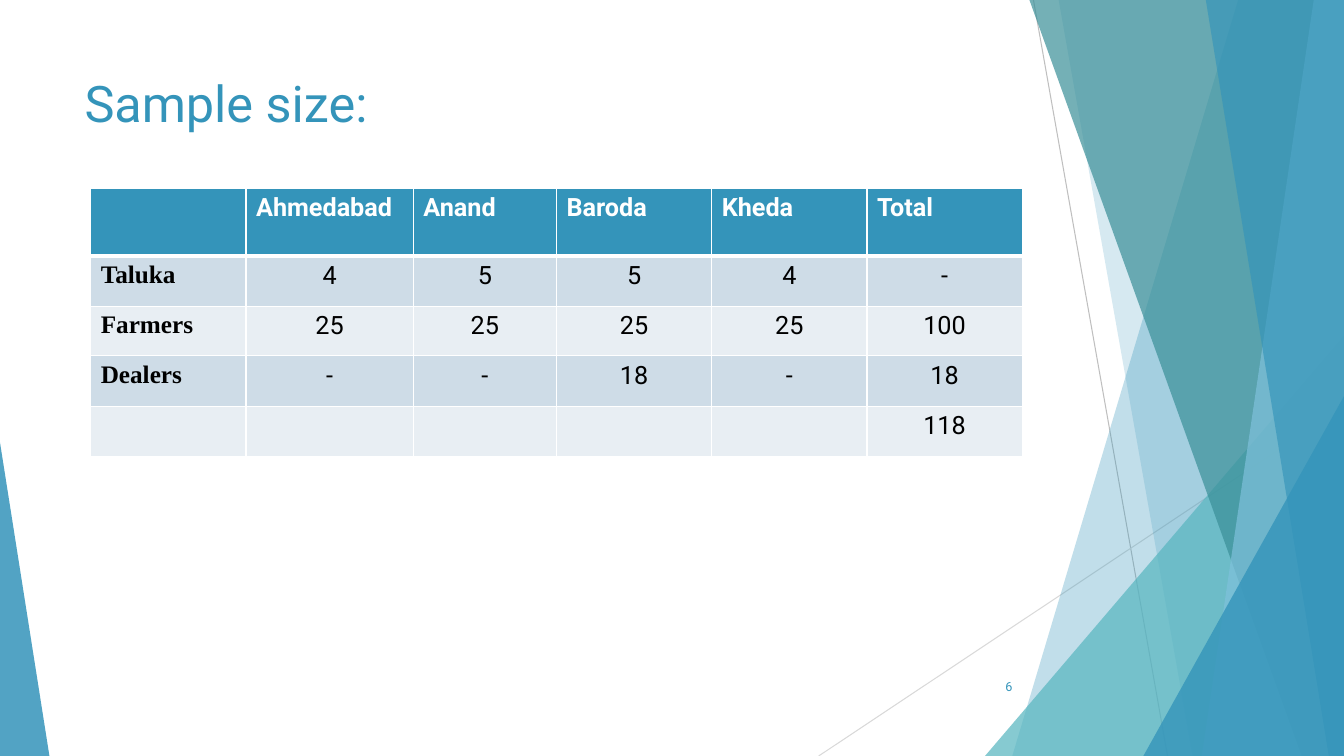
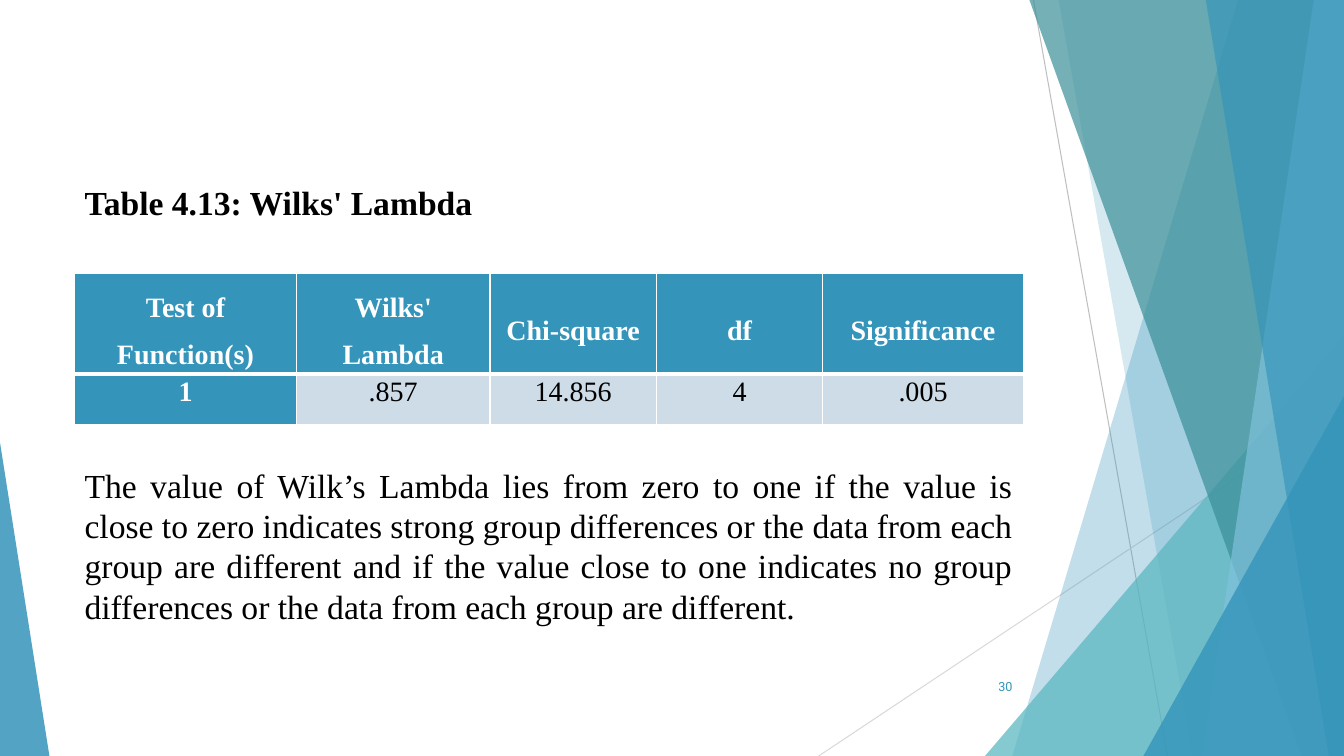
from dataclasses import dataclass

from lxml.etree import SubElement
from pptx import Presentation
from pptx.dml.color import RGBColor
from pptx.enum.shapes import MSO_CONNECTOR, MSO_SHAPE
from pptx.enum.text import MSO_ANCHOR, PP_ALIGN
from pptx.oxml.ns import qn
from pptx.util import Inches, Pt

# Shared look
WIDTH, HEIGHT = 13.33, 7.5
BLUE, TEAL, DEEP_TEAL, SKY = "3494BA", "58B6C0", "3A8F98", "7FC1DB"
WHITE, BLACK = "FFFFFF", "000000"
BANDS = ("CEDCE7", "E8EEF3")
SANS, SERIF = "Roboto", "Times New Roman"
LEFT, TEXT_WIDTH = 0.74, 9.4


@dataclass(frozen=True)
class Ray:
    start: tuple[float, float]
    end: tuple[float, float]
    color: str


@dataclass(frozen=True)
class Ribbon:
    """A band from a slanted left side to the right edge of the slide."""
    top: float
    bottom: float
    color: str
    opacity: int


@dataclass(frozen=True)
class Wedge:
    """A triangle standing on the bottom edge of the slide."""
    left: float
    top: float
    width: float
    apex: float
    color: str
    opacity: int


@dataclass(frozen=True)
class CellStyle:
    fill: str
    color: str = BLACK
    font: str = SANS
    size: float = 18
    bold: bool = False
    align: PP_ALIGN = PP_ALIGN.CENTER
    anchor: MSO_ANCHOR = MSO_ANCHOR.TOP
    insets: tuple[float, float] = (0.1, 0.05)
    spacing: float = 1.0
    after: float = 0
    top_line: float = 1
    bottom_line: float = 1


RAYS = (
    Ray((10.25, 0), (11.58, HEIGHT), "BFBFBF"),
    Ray((WIDTH, 4.03), (8.12, HEIGHT), "D9D9D9"),
)
FACETS = (
    Ribbon(12.28, 10.04, BLUE, 30),
    Ribbon(10.5, 11.83, BLUE, 20),
    Wedge(9.77, 3.33, 3.56, 1, TEAL, 72),
    Ribbon(10.21, 12.91, DEEP_TEAL, 70),
    Ribbon(13.03, 11.92, SKY, 70),
    Ribbon(11.96, 13.18, BLUE, 65),
    Wedge(11.34, 3.93, 1.99, 1, BLUE, 80),
    Wedge(0, 4.39, 0.49, 0, BLUE, 85),
)


def rgb(color: str) -> RGBColor:
    return RGBColor.from_string(color)


def write(frame, text: str, *, size: float, font: str = SANS, color: str = BLACK,
          bold: bool = False, align: PP_ALIGN = PP_ALIGN.LEFT, spacing: float = 1.0,
          after: float = 0) -> None:
    para = frame.paragraphs[0]
    para.alignment = align
    para.line_spacing = spacing
    para.space_after = Pt(after)
    # Without text the format still has to set the height of the empty line
    span = para.add_run() if text else para
    if text:
        span.text = text
    span.font.size = Pt(size)
    span.font.name = font
    span.font.bold = bold
    span.font.color.rgb = rgb(color)


def add_text(page, text: str, left: float, top: float, width: float, height: float, *,
             anchor: MSO_ANCHOR = MSO_ANCHOR.TOP, wrap: bool = True, **style) -> None:
    box = page.shapes.add_textbox(Inches(left), Inches(top), Inches(width), Inches(height))
    box.text_frame.word_wrap = wrap
    box.text_frame.vertical_anchor = anchor
    write(box.text_frame, text, **style)


# Background
def add_ray(page, ray: Ray) -> None:
    line = page.shapes.add_connector(
        MSO_CONNECTOR.STRAIGHT, *(Inches(value) for value in ray.start + ray.end))
    line.line.color.rgb = rgb(ray.color)
    line.line.width = Pt(0.75)
    SubElement(line._element.spPr, qn("a:effectLst"))


def add_facet(page, facet: Ribbon | Wedge) -> None:
    if isinstance(facet, Ribbon):
        outline = page.shapes.build_freeform(Inches(facet.top), 0)
        corners = ((WIDTH, 0), (WIDTH, HEIGHT), (facet.bottom, HEIGHT))
        outline.add_line_segments([(Inches(x), Inches(y)) for x, y in corners])
        shape = outline.convert_to_shape()
    else:
        shape = page.shapes.add_shape(
            MSO_SHAPE.ISOSCELES_TRIANGLE, Inches(facet.left), Inches(facet.top),
            Inches(facet.width), Inches(HEIGHT - facet.top))
        shape.adjustments[0] = facet.apex
    shape.shadow.inherit = False
    shape.line.fill.background()
    shape.fill.solid()
    shape.fill.fore_color.rgb = rgb(facet.color)
    color = shape._element.spPr.find(qn("a:solidFill"))[0]
    SubElement(color, qn("a:alpha"), val=str(facet.opacity * 1000))


def add_page(deck, number: int):
    page = deck.slides.add_slide(deck.slide_layouts[6])
    for ray in RAYS:
        add_ray(page, ray)
    for facet in FACETS:
        add_facet(page, facet)
    add_text(page, str(number), 9.39, 6.61, 0.75, 0.4, anchor=MSO_ANCHOR.MIDDLE,
             size=9, color=BLUE, align=PP_ALIGN.RIGHT)
    return page


# Tables
def set_borders(cell, style: CellStyle) -> None:
    widths = {"lnL": 1, "lnR": 1, "lnT": style.top_line, "lnB": style.bottom_line}
    properties = cell._tc.get_or_add_tcPr()
    for side, width in widths.items():
        border = SubElement(properties, qn(f"a:{side}"), w=str(Pt(width)))
        SubElement(SubElement(border, qn("a:solidFill")), qn("a:srgbClr"), val=WHITE)


def fill_cell(cell, text: str, style: CellStyle) -> None:
    set_borders(cell, style)
    cell.fill.solid()
    cell.fill.fore_color.rgb = rgb(style.fill)
    cell.vertical_anchor = style.anchor
    side, edge = (Inches(value) for value in style.insets)
    cell.margin_left = cell.margin_right = side
    cell.margin_top = cell.margin_bottom = edge
    write(cell.text_frame, text, size=style.size, font=style.font, color=style.color,
          bold=style.bold, align=style.align, spacing=style.spacing, after=style.after)


def add_grid(page, left: float, top: float, widths: list[float], heights: list[float],
             rows: list[list[str]], style_at) -> None:
    table = page.shapes.add_table(
        len(rows), len(widths), Inches(left), Inches(top),
        Inches(sum(widths)), Inches(sum(heights))).table
    for column, width in zip(table.columns, widths):
        column.width = Inches(width)
    for row, height in zip(table.rows, heights):
        row.height = Inches(height)
    for r, texts in enumerate(rows):
        for c, text in enumerate(texts):
            fill_cell(table.cell(r, c), text, style_at(r, c))


def sample_style(row: int, column: int) -> CellStyle:
    if row == 0:
        return CellStyle(BLUE, WHITE, bold=True, align=PP_ALIGN.LEFT, bottom_line=3)
    fill, top_line = BANDS[(row - 1) % 2], 3 if row == 1 else 1
    if column == 0:
        return CellStyle(fill, font=SERIF, bold=True, align=PP_ALIGN.LEFT, top_line=top_line)
    return CellStyle(fill, top_line=top_line)


def lambda_style(row: int, column: int) -> CellStyle:
    strong = row == 0 or column == 0
    shared = dict(fill=BLUE if strong else BANDS[0], color=WHITE if strong else BLACK,
                  bold=strong, font=SERIF, size=20, insets=(0.07, 0))
    if row == 0:
        return CellStyle(**shared, anchor=MSO_ANCHOR.MIDDLE, spacing=1.5, bottom_line=3)
    return CellStyle(**shared, spacing=1.07, after=8, top_line=3)


# Slides
def add_sample_page(deck) -> None:
    page = add_page(deck, 6)
    add_text(page, "Sample size:", LEFT, 0.67, TEXT_WIDTH, 1.44, size=36, color=BLUE)
    rows = [
        ["", "Ahmedabad", "Anand", "Baroda", "Kheda", "Total"],
        ["Taluka", "4", "5", "5", "4", "-"],
        ["Farmers", "25", "25", "25", "25", "100"],
        ["Dealers", "-", "-", "18", "-", "18"],
        ["", "", "", "", "", "118"],
    ]
    add_grid(page, 0.9, 1.87, [1.54, 1.66, 1.42, 1.54, 1.54, 1.54],
             [0.67, 0.5, 0.49, 0.5, 0.5], rows, sample_style)


def add_lambda_page(deck) -> None:
    page = add_page(deck, 30)
    add_text(page, "Table 4.13: Wilks' Lambda", LEFT, 1.56, 4.09, 0.71, wrap=False,
             size=24, font=SERIF, bold=True, spacing=1.5)
    rows = [
        ["Test of Function(s)", "Wilks' Lambda", "Chi-square", "df", "Significance"],
        ["1", ".857", "14.856", "4", ".005"],
    ]
    add_grid(page, LEFT, 2.71, [2.2, 1.92, 1.65, 1.65, 1.99], [0.8, 0.5],
             rows, lambda_style)
    add_text(page, "The value of Wilk’s Lambda lies from zero to one if the value is close "
             "to zero indicates strong group differences or the data from each group are "
             "different and if the value close to one indicates no group differences or "
             "the data from each group are different.",
             LEFT, 4.56, TEXT_WIDTH, 1.72, size=24, font=SERIF, align=PP_ALIGN.JUSTIFY)


def main() -> None:
    deck = Presentation()
    deck.slide_width, deck.slide_height = Inches(WIDTH), Inches(HEIGHT)
    add_sample_page(deck)
    add_lambda_page(deck)
    deck.save("out.pptx")


if __name__ == "__main__":
    main()
